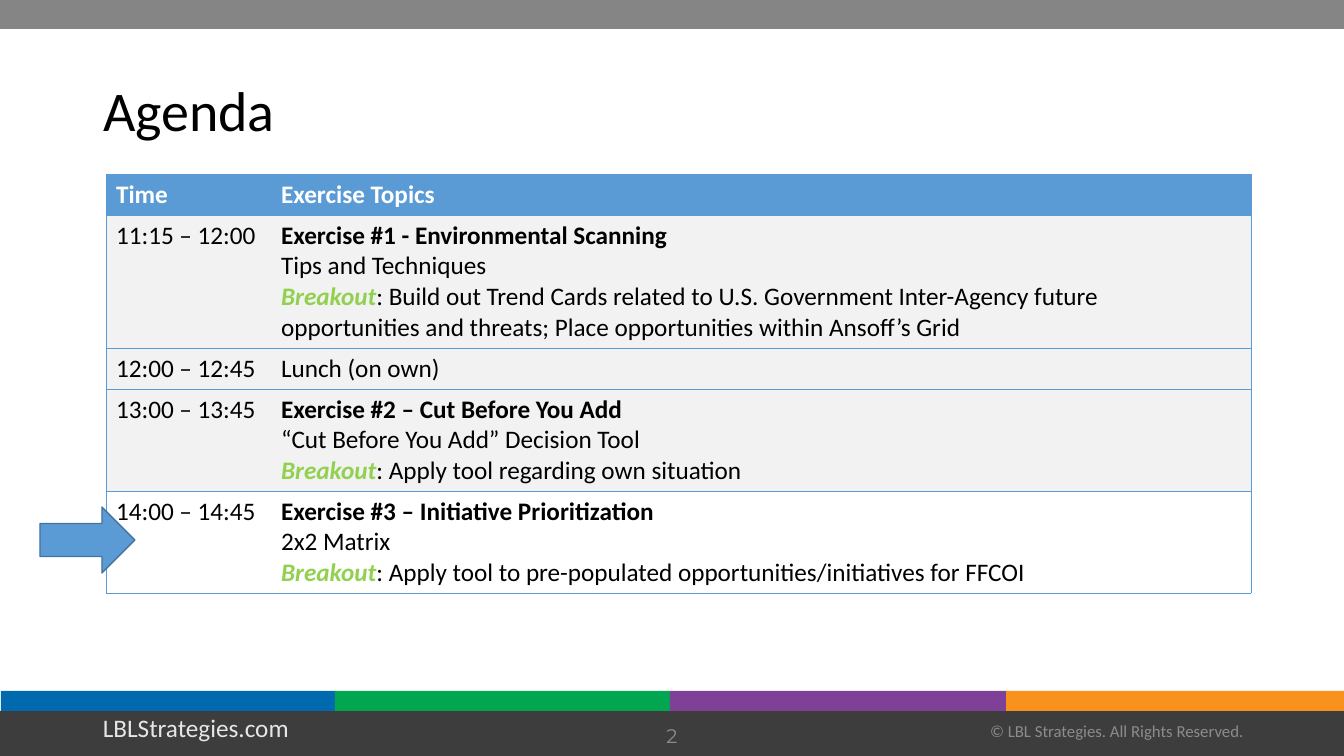
from lxml import etree
from pptx import Presentation
from pptx.dml.color import RGBColor
from pptx.enum.shapes import MSO_SHAPE
from pptx.enum.text import MSO_ANCHOR, PP_ALIGN
from pptx.oxml.ns import qn
from pptx.util import Emu, Pt

EMU_PER_PX = 914400 / 100.8
BLUE, BLACK, WHITE, GRAY, GREEN = "5B9BD5", "000000", "FFFFFF", "8C8C8C", "92D050"
STRIPES = [(1, 335, "016AAF"), (335, 335, "00A750"), (670, 337, "7F4098"), (1006, 338, "F9921D")]
COLUMN_WIDTHS = [165, 980]
# Row height, row fill, time, topic paragraphs as lists of (text, style)
AGENDA = [
    (41, BLUE, "Time", [[("Exercise Topics", "header")]]),
    (133, "F2F2F2", "11:15 – 12:00", [
        [("Exercise #1 - Environmental Scanning", "bold")],
        [("Tips and Techniques", "plain")],
        [("Breakout", "breakout"),
         (": Build out Trend Cards related to U.S. Government Inter-Agency future "
          "opportunities and threats; Place opportunities within Ansoff’s Grid", "plain")]]),
    (41, "F2F2F2", "12:00 – 12:45", [[("Lunch (on own)", "plain")]]),
    (102, "F2F2F2", "13:00 – 13:45", [
        [("Exercise #2 – Cut Before You Add", "bold")],
        [("“Cut Before You Add” Decision Tool", "plain")],
        [("Breakout", "breakout"), (": Apply tool regarding own situation", "plain")]]),
    (102, WHITE, "14:00 – 14:45", [
        [("Exercise #3 – Initiative Prioritization", "bold")],
        [("2x2 Matrix", "plain")],
        [("Breakout", "breakout"),
         (": Apply tool to pre-populated opportunities/initiatives for FFCOI", "plain")]]),
]
# Colour, bold, italic
STYLES = {
    "header": (WHITE, True, False),
    "bold": (BLACK, True, False),
    "plain": (BLACK, False, False),
    "breakout": (GREEN, True, True),
}


def px(n):
    return Emu(round(n * EMU_PER_PX))


def box(*lengths):
    return [px(n) for n in lengths]


def rgb(color):
    return RGBColor.from_string(color)


def set_font(font, size, color, name="Calibri"):
    font.name, font.size, font.color.rgb = name, Pt(size), rgb(color)


def add_block(s, kind, x, y, w, h, fill, line=None):
    sp = s.shapes.add_shape(kind, *box(x, y, w, h))
    sp.shadow.inherit = False
    sp.fill.solid()
    sp.fill.fore_color.rgb = rgb(fill)
    if line:
        sp.line.color.rgb = rgb(line)
        sp.line.width = Pt(1)
    else:
        sp.line.fill.background()


def add_label(s, x, y, w, h, text, size, color, name="Calibri",
              align=PP_ALIGN.CENTER, anchor=MSO_ANCHOR.MIDDLE):
    tf = s.shapes.add_textbox(*box(x, y, w, h)).text_frame
    tf.word_wrap = True
    tf.vertical_anchor = anchor
    p = tf.paragraphs[0]
    p.text, p.alignment = text, align
    set_font(p.font, size, color, name)


def add_title(s, text):
    sp = s.shapes.title
    sp.left, sp.top, sp.width, sp.height = box(93, 40, 1159, 146)
    tf = sp.text_frame
    tf.text = text
    tf.vertical_anchor = MSO_ANCHOR.MIDDLE
    p = tf.paragraphs[0]
    p.alignment, p.line_spacing = PP_ALIGN.LEFT, 0.9
    set_font(p.font, 40, BLACK)


def set_borders(cell, visible):
    """Draw the sides listed in visible (of L, R, T, B) and hide the others."""
    tc_pr = cell._tc.get_or_add_tcPr()
    for side in "LRTB":
        ln = etree.SubElement(tc_pr, qn(f"a:ln{side}"), w=str(Pt(0.5)))
        if side in visible:
            fill = etree.SubElement(ln, qn("a:solidFill"))
            etree.SubElement(fill, qn("a:srgbClr"), val=BLUE)
        else:
            etree.SubElement(ln, qn("a:noFill"))


def fill_cell(cell, paragraphs, fill, borders):
    set_borders(cell, borders)
    cell.fill.solid()
    cell.fill.fore_color.rgb = rgb(fill)
    tf = cell.text_frame
    for i, runs in enumerate(paragraphs):
        p = tf.add_paragraph() if i else tf.paragraphs[0]
        for text, style in runs:
            r = p.add_run()
            r.text = text
            color, r.font.bold, r.font.italic = STYLES[style]
            set_font(r.font, 18, color)


def add_agenda(s):
    height = sum(row[0] for row in AGENDA)
    frame = s.shapes.add_table(len(AGENDA), len(COLUMN_WIDTHS),
                               *box(106, 174, sum(COLUMN_WIDTHS), height))
    table = frame.table
    table.horz_banding = False
    for column, width in zip(table.columns, COLUMN_WIDTHS):
        column.width = px(width)
    for i, (row_height, fill, time, topics) in enumerate(AGENDA):
        table.rows[i].height = px(row_height)
        time_style = "plain" if i else "header"
        fill_cell(table.cell(i, 0), [[(time, time_style)]], fill, "LTB")
        fill_cell(table.cell(i, 1), topics, fill, "RTB")


def main():
    prs = Presentation()
    prs.slide_width, prs.slide_height = box(1344, 756)
    s = prs.slides.add_slide(prs.slide_layouts[5])

    add_block(s, MSO_SHAPE.RECTANGLE, 0, 0, 1344, 29, "858585")
    add_block(s, MSO_SHAPE.RECTANGLE, 0, 711, 1344, 45, "3D3D3D")
    for x, w, color in STRIPES:
        add_block(s, MSO_SHAPE.RECTANGLE, x, 691, w, 20, color)

    add_label(s, 93, 707, 217, 40, "LBLStrategies.com", 18, "E7E6E6",
              align=PP_ALIGN.LEFT, anchor=MSO_ANCHOR.TOP)
    add_title(s, "Agenda")
    add_label(s, 890, 711, 454, 40, "© LBL Strategies. All Rights Reserved.", 12, GRAY)
    add_label(s, 521, 716, 302, 40, "2", 14, GRAY, "Montserrat")
    add_agenda(s)
    add_block(s, MSO_SHAPE.RIGHT_ARROW, 40, 507, 95, 66, BLUE, "43739E")

    prs.save("out.pptx")


if __name__ == "__main__":
    main()
